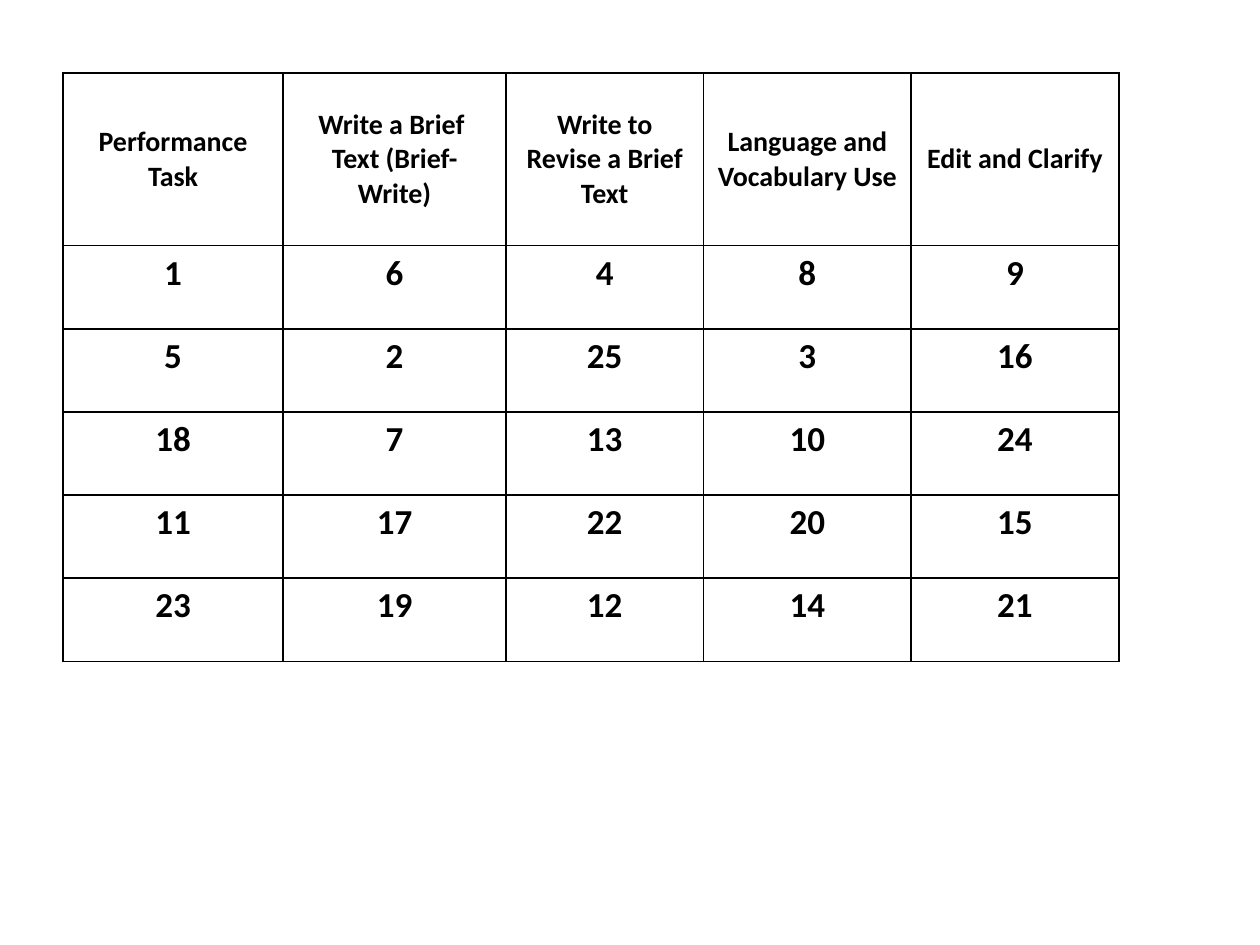
import dataclasses

import pptx
import pptx.dml.color
import pptx.enum.text
import pptx.oxml
import pptx.oxml.ns
import pptx.util


@dataclasses.dataclass(frozen=True)
class Theme:
    font: str = "Calibri"
    ink: str = "000000"
    paper: str = "FFFFFF"
    heading_size: int = 16
    number_size: int = 20
    border_width: int = 1


THEME = Theme()
SLIDE_WIDTH, SLIDE_HEIGHT = pptx.util.Inches(10), pptx.util.Inches(7.5)

CLAIMS = {
    "Performance Task": (1, 5, 18, 11, 23),
    "Write a Brief  Text (Brief-Write)": (6, 2, 7, 17, 19),
    "Write to Revise a Brief Text": (4, 25, 13, 22, 12),
    "Language and Vocabulary Use": (8, 3, 10, 20, 14),
    "Edit and Clarify": (9, 16, 24, 15, 21),
}
# Relative widths of the claim columns, and of the heading and number rows
COLUMN_PARTS = (1.75, 1.77, 1.57, 1.65, 1.65)
ROW_PARTS = (1.37,) + (0.66,) * 5


def share_out(length, parts):
    """Divide a length in proportion to the given parts."""
    return [round(length * part / sum(parts)) for part in parts]


def add_borders(cell):
    """Rule all four sides of a cell; border lines precede the fill."""
    properties = cell._tc.get_or_add_tcPr()
    width = pptx.util.Pt(THEME.border_width)
    for position, side in enumerate(("lnL", "lnR", "lnT", "lnB")):
        border = pptx.oxml.parse_xml(
            f'<a:{side} {pptx.oxml.ns.nsdecls("a")} w="{width}">'
            f'<a:solidFill><a:srgbClr val="{THEME.ink}"/></a:solidFill>'
            f"</a:{side}>"
        )
        properties.insert(position, border)


def fill_cell(cell, wording, size, anchor):
    cell.fill.solid()
    cell.fill.fore_color.rgb = pptx.dml.color.RGBColor.from_string(THEME.paper)
    cell.vertical_anchor = anchor
    add_borders(cell)

    paragraph = cell.text_frame.paragraphs[0]
    paragraph.alignment = pptx.enum.text.PP_ALIGN.CENTER
    run = paragraph.add_run()
    run.text = str(wording)
    run.font.name = THEME.font
    run.font.size = pptx.util.Pt(size)
    run.font.bold = True
    run.font.color.rgb = pptx.dml.color.RGBColor.from_string(THEME.ink)


def add_claims_table(slide, left, top, width, height):
    """Place the item numbers under their claims within the given box."""
    claims_table = slide.shapes.add_table(
        len(ROW_PARTS), len(COLUMN_PARTS), left, top, width, height
    ).table
    claims_table.first_row = claims_table.horz_banding = False

    # Grid
    for column, column_width in zip(claims_table.columns, share_out(width, COLUMN_PARTS)):
        column.width = column_width
    for row, row_height in zip(claims_table.rows, share_out(height, ROW_PARTS)):
        row.height = row_height

    # Headings, each with its item numbers below
    anchors = pptx.enum.text.MSO_ANCHOR
    for column_index, (claim, item_numbers) in enumerate(CLAIMS.items()):
        fill_cell(claims_table.cell(0, column_index), claim,
                  THEME.heading_size, anchors.MIDDLE)
        for row_index, item_number in enumerate(item_numbers, start=1):
            fill_cell(claims_table.cell(row_index, column_index), item_number,
                      THEME.number_size, anchors.TOP)


def main():
    presentation = pptx.Presentation()
    presentation.slide_width, presentation.slide_height = SLIDE_WIDTH, SLIDE_HEIGHT
    slide = presentation.slides.add_slide(presentation.slide_layouts[6])
    add_claims_table(
        slide,
        left=round(SLIDE_WIDTH * 0.05),
        top=round(SLIDE_HEIGHT * 0.58 / 7.5),
        width=round(SLIDE_WIDTH * 8.38 / 10),
        height=round(SLIDE_HEIGHT * 4.67 / 7.5),
    )
    presentation.save("out.pptx")


if __name__ == "__main__":
    main()
